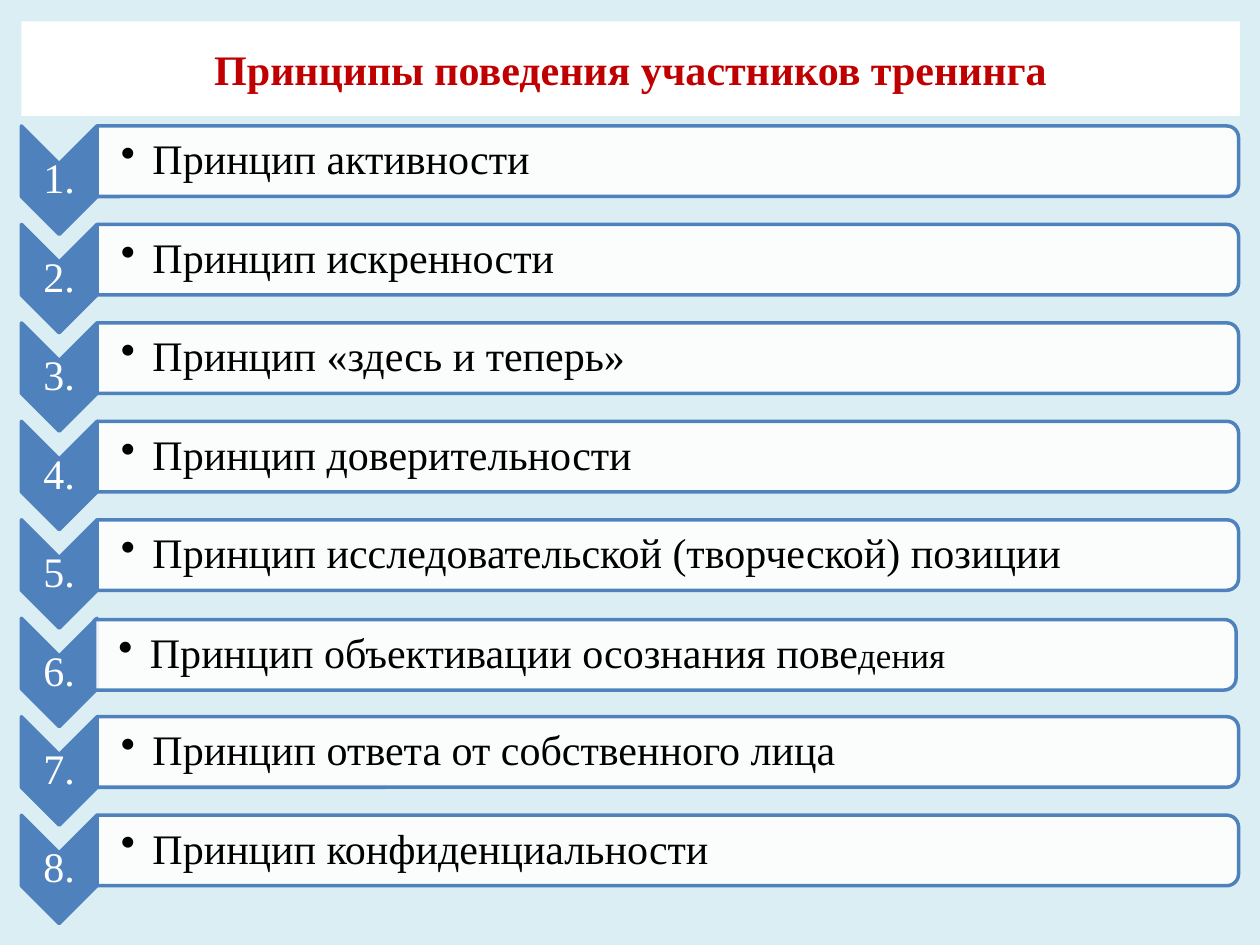
from lxml import etree
from pptx import Presentation
from pptx.dml.color import RGBColor
from pptx.enum.shapes import MSO_SHAPE
from pptx.enum.text import MSO_ANCHOR, PP_ALIGN
from pptx.oxml.ns import qn
from pptx.util import Inches, Pt

CHEVRON = MSO_SHAPE.CHEVRON
ROUNDED_BAR = MSO_SHAPE.ROUND_2_SAME_RECTANGLE
RECTANGLE = MSO_SHAPE.RECTANGLE
MIDDLE = MSO_ANCHOR.MIDDLE
LEFT, CENTER = PP_ALIGN.LEFT, PP_ALIGN.CENTER

BLUE, WHITE, BLACK, RED = "4F81BD", "FFFFFF", "000000", "C00000"
BACKGROUND = "DBEEF4"

FIRST_TOP = 1.0
PITCH = 5.47 / 7
CHEVRON_WIDTH, CHEVRON_HEIGHT = 0.6, 0.86
BAR_LEFT, BAR_WIDTH, BAR_HEIGHT = 0.77, 9.06, 0.56

# Each principle is a list of (text, size) runs
PRINCIPLES = [
    [("Принцип активности", 24)],
    [("Принцип искренности", 24)],
    [("Принцип «здесь и теперь»", 24)],
    [("Принцип доверительности", 24)],
    [("Принцип исследовательской (творческой) позиции", 24)],
    [("Принцип объективации осознания пове", 24), ("дения", 20)],
    [("Принцип ответа от собственного лица", 24)],
    [("Принцип конфиденциальности", 24)],
]
# The sixth bar sits slightly off the grid
BAR_OFFSETS = {5: (-0.02, 0.01)}


def color(value):
    return RGBColor.from_string(value)


def write_text(shape, runs, text_color=BLACK, bold=False, align=LEFT,
               margins=(0.02, 0.02), spacing=None, bullet=False):
    frame = shape.text_frame
    frame.word_wrap = True
    frame.vertical_anchor = MIDDLE
    frame.margin_left, frame.margin_right = map(Inches, margins)
    frame.margin_top = frame.margin_bottom = Inches(0.02)
    paragraph = frame.paragraphs[0]
    paragraph.alignment = align
    if spacing:
        paragraph.line_spacing = spacing
    if bullet:
        properties = paragraph._p.get_or_add_pPr()
        properties.set("marL", str(Inches(0.25)))
        properties.set("indent", str(Inches(-0.25)))
        etree.SubElement(properties, qn("a:buChar")).set("char", "•")
    for text, size in runs:
        run = paragraph.add_run()
        run.text = text
        run.font.name = "Times New Roman"
        run.font.size = Pt(size)
        run.font.bold = bold
        run.font.color.rgb = color(text_color)


class PrinciplesSlide:
    def __init__(self, presentation):
        self.slide = presentation.slides.add_slide(presentation.slide_layouts[6])
        fill = self.slide.background.fill
        fill.solid()
        fill.fore_color.rgb = color(BACKGROUND)

    def box(self, kind, left, top, width, height, fill, line=None, alpha=None):
        shape = self.slide.shapes.add_shape(
            kind, Inches(left), Inches(top), Inches(width), Inches(height))
        shape.shadow.inherit = False
        shape.fill.solid()
        shape.fill.fore_color.rgb = color(fill)
        if alpha:
            fill_color = shape._element.spPr.find(qn("a:solidFill"))[0]
            etree.SubElement(fill_color, qn("a:alpha")).set("val", str(alpha * 1000))
        if line:
            shape.line.color.rgb = color(line)
            shape.line.width = Pt(2)
        else:
            shape.line.fill.background()
        return shape

    def quarter_turned(self, kind, left, top, width, height, fill, alpha=None):
        """Place a shape turned by 90° so that it covers the given area."""
        shift = (width - height) / 2
        shape = self.box(kind, left + shift, top - shift, height, width,
                         fill, BLUE, alpha)
        shape.rotation = 90

    def text(self, left, top, width, height, runs, **style):
        shape = self.slide.shapes.add_textbox(
            Inches(left), Inches(top), Inches(width), Inches(height))
        write_text(shape, runs, **style)

    def title(self, text):
        shape = self.box(RECTANGLE, 0.17, 0.17, 9.67, 0.75, WHITE)
        write_text(shape, [(text, 24)], text_color=RED, bold=True,
                   align=CENTER, margins=(0.1, 0.1))

    def principle(self, index, runs):
        top = FIRST_TOP + index * PITCH
        # Number on a downward chevron
        self.quarter_turned(CHEVRON, 0.17, top, CHEVRON_WIDTH, CHEVRON_HEIGHT, BLUE)
        self.text(0.17, top + 0.3, CHEVRON_WIDTH, 0.26, [(f"{index + 1}.", 24)],
                  text_color=WHITE, align=CENTER, spacing=0.9)
        # Bar with the bulleted wording
        shift_x, shift_y = BAR_OFFSETS.get(index, (0, 0))
        left, top = BAR_LEFT + shift_x, top + shift_y
        self.quarter_turned(ROUNDED_BAR, left, top, BAR_WIDTH, BAR_HEIGHT, WHITE, 90)
        self.text(left, top + 0.03, 9.04, 0.5, runs,
                  margins=(0.19, 0.02), spacing=0.9, bullet=True)


def main():
    presentation = Presentation()
    presentation.slide_width = Inches(10)
    presentation.slide_height = Inches(7.5)
    page = PrinciplesSlide(presentation)
    page.title("Принципы поведения участников тренинга")
    for index, runs in enumerate(PRINCIPLES):
        page.principle(index, runs)
    presentation.save("out.pptx")


if __name__ == "__main__":
    main()
